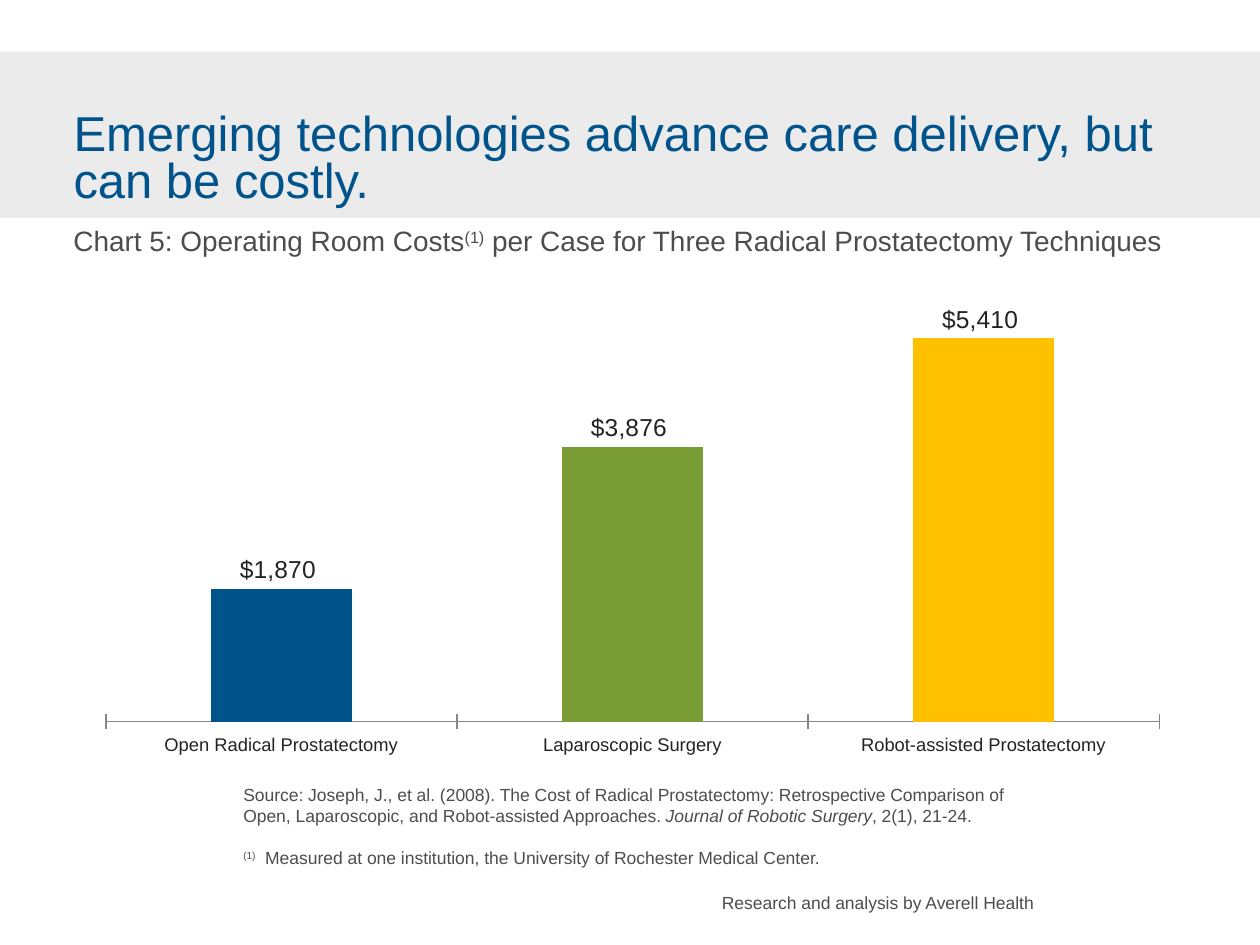
from pptx import Presentation
from pptx.chart.data import CategoryChartData
from pptx.dml.color import RGBColor
from pptx.enum.chart import XL_CHART_TYPE as ChartType, XL_LABEL_POSITION as LabelPosition
from pptx.enum.chart import XL_TICK_MARK as TickMark
from pptx.enum.shapes import MSO_SHAPE as Shape
from pptx.enum.text import MSO_ANCHOR as Anchor, MSO_AUTO_SIZE as AutoSize, PP_ALIGN as Align
from pptx.oxml import parse_xml
from pptx.util import Pt

BLUE, GREEN, YELLOW = "00548B", "799D34", "FFC000"
GRAY, DARK, LINE, BAND = "4D4D4D", "232323", "868686", "EBEBEB"
DOLLARS = '"$"#,##0_);[Red]\\("$"#,##0\\)'


def color(hex_string):
    return RGBColor.from_string(hex_string)


def write(shape, box, paragraphs, size, hex_string, line_spacing=None, gap=0):
    """Place a text shape; each paragraph is a list of (text, style) runs."""
    shape.left, shape.top, shape.width, shape.height = map(Pt, box)
    frame = shape.text_frame
    frame.margin_left = frame.margin_right = frame.margin_top = frame.margin_bottom = 0
    frame.word_wrap = True
    frame.auto_size = AutoSize.SHAPE_TO_FIT_TEXT
    frame.vertical_anchor = Anchor.TOP
    for index, runs in enumerate(paragraphs):
        paragraph = frame.add_paragraph() if index else frame.paragraphs[0]
        paragraph.alignment = Align.LEFT
        paragraph.space_before = Pt(gap if index else 0)
        if line_spacing:
            paragraph.line_spacing = line_spacing
        for text, style in runs:
            run = paragraph.add_run()
            run.text = text
            run.font.name, run.font.size = "Arial", Pt(size)
            run.font.color.rgb = color(hex_string)
            if style == "italic":
                run.font.italic = True
            elif style == "superscript":
                run.font._element.set("baseline", "30000")


presentation = Presentation()
presentation.slide_width, presentation.slide_height = Pt(720), Pt(540)
slide = presentation.slides.add_slide(presentation.slide_layouts[5])
shapes = slide.shapes

# Title band, behind the title
band = shapes.add_shape(Shape.RECTANGLE, 0, Pt(29.5), Pt(720), Pt(95))
band.shadow.inherit = False
band.fill.solid()
band.fill.fore_color.rgb = color(BAND)
band.line.fill.background()
title = shapes.title
title._element.addprevious(band._element)

# Title, subtitle, source notes and credit
write(title, (42, 65, 648, 54),
      [[("Emerging technologies advance care delivery, but can be costly.", None)]],
      28, BLUE, line_spacing=0.8)
subtitle, notes, credit = [shapes.add_textbox(0, 0, 0, 0) for _ in range(3)]
write(subtitle, (42, 131.5, 639.5, 16),
      [[("Chart 5: Operating Room Costs", None), ("(1)", "superscript"),
        (" per Case for Three Radical Prostatectomy Techniques", None)]],
      16, GRAY, line_spacing=0.8)
write(notes, (139, 448, 441.5, 48),
      [[("Source: Joseph, J., et al. (2008). The Cost of Radical Prostatectomy: "
         "Retrospective Comparison of Open, Laparoscopic, and Robot-assisted Approaches. ", None),
        ("Journal of Robotic Surgery", "italic"), (", 2(1), 21-24.", None)],
       [("(1)", "superscript"),
        ("  Measured at one institution, the University of Rochester Medical Center.", None)]],
      10, GRAY, gap=12)
write(credit, (412.5, 510, 190, 12),
      [[("Research and analysis by Averell Health", None)]], 10, GRAY)

# Column chart
data = CategoryChartData(number_format=DOLLARS)
data.categories = ["Open Radical Prostatectomy", "Laparoscopic Surgery",
                   "Robot-assisted Prostatectomy"]
data.add_series("Series 1", [1870, 3876, 5410])
chart = shapes.add_chart(ChartType.COLUMN_CLUSTERED, Pt(48), Pt(164), Pt(627), Pt(273), data).chart
chart.has_legend = chart.has_title = False
chart.font.name, chart.font.size = "Arial", Pt(18)
chart.font.color.rgb = color(DARK)

# Axes
value_axis, category_axis = chart.value_axis, chart.category_axis
value_axis.minimum_scale, value_axis.maximum_scale = 0, 6000
value_axis.has_major_gridlines = False
value_axis.tick_labels.number_format = DOLLARS
value_axis.tick_labels.number_format_is_linked = False
value_axis.visible = False
category_axis.major_tick_mark = TickMark.CROSS
category_axis.tick_labels.font.size = Pt(10.5)
category_axis.format.line.color.rgb = color(LINE)
category_axis.format.line.width = Pt(0.75)

# Columns and their labels
plot = chart.plots[0]
plot.vary_by_categories = False
plot.gap_width = 150
series = plot.series[0]
series.format.fill.solid()
series.format.fill.fore_color.rgb = color(BLUE)
for index, fill_color in enumerate([GREEN, YELLOW], start=1):
    fill = series.points[index].format.fill
    fill.solid()
    fill.fore_color.rgb = color(fill_color)
labels = series.data_labels
labels.show_value = True
labels.position = LabelPosition.OUTSIDE_END
labels.number_format, labels.number_format_is_linked = DOLLARS, False
labels.font.name, labels.font.size = "Arial", Pt(14)
labels.font.color.rgb = color(DARK)

# Fixed inner plot area, as fractions of the chart
plot_area = chart._chartSpace.chart.plotArea
for old_layout in plot_area.xpath("c:layout"):
    plot_area.remove(old_layout)
fractions = "".join(f'<c:{name} val="{value}"/>' for name, value in
                    [("x", 0.02), ("y", 0.02), ("w", 0.96), ("h", 0.89)])
plot_area.insert(0, parse_xml(
    '<c:layout xmlns:c="http://schemas.openxmlformats.org/drawingml/2006/chart"><c:manualLayout>'
    '<c:layoutTarget val="inner"/><c:xMode val="edge"/><c:yMode val="edge"/>'
    f'{fractions}</c:manualLayout></c:layout>'))

presentation.save("out.pptx")
